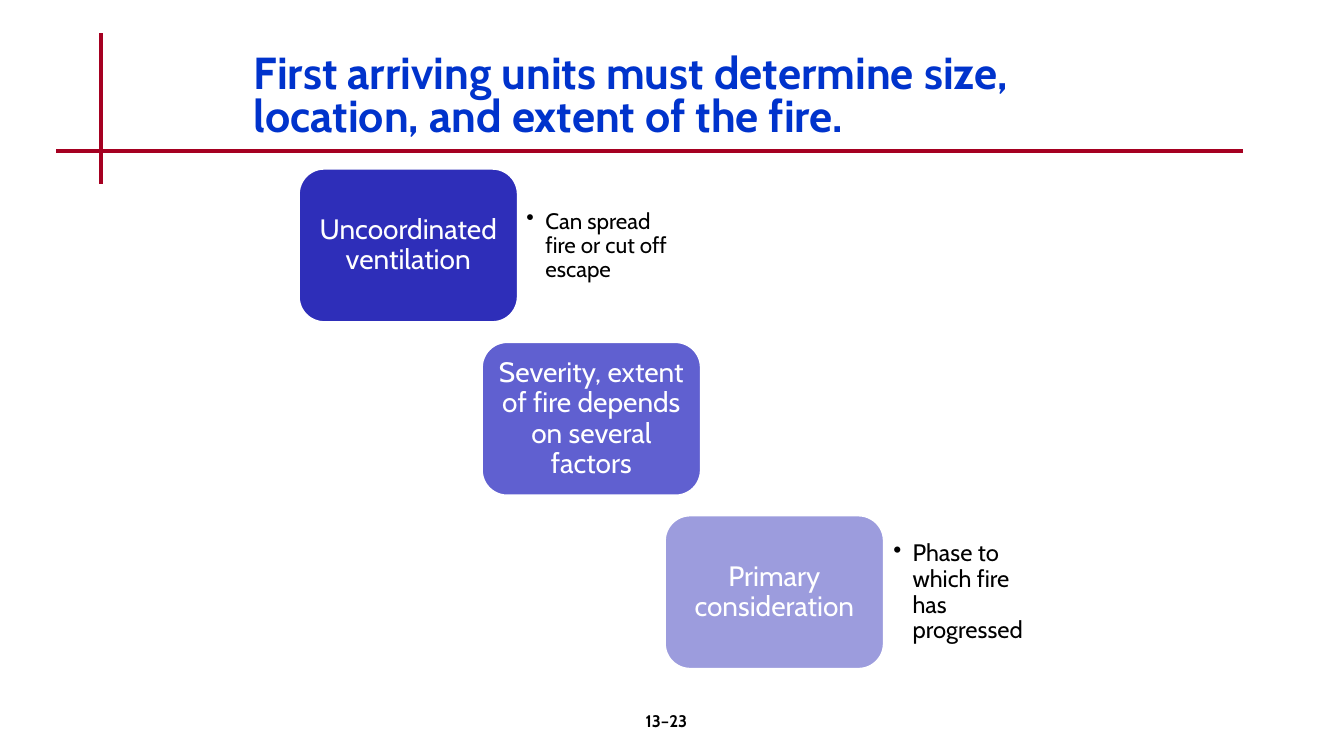
import pptx
import pptx.util
import pptx.dml.color
import pptx.enum.shapes
import pptx.enum.text
from lxml import etree

Inches = pptx.util.Inches
Pt = pptx.util.Pt
Align = pptx.enum.text.PP_ALIGN
Anchor = pptx.enum.text.MSO_ANCHOR

COLORS = {
    "title": "0033CC",
    "rule": "A50021",
    "text": "000000",
    "white": "FFFFFF",
    "steps": ["2E2EB9", "6060D0", "9C9CDD"],
}

# Step label, bullet beside it, bullet size, bullet inset
STEPS = [
    ("Uncoordinated ventilation", "Can spread fire or cut off escape", 16, 0.08),
    ("Severity, extent of fire depends on several factors", None, None, None),
    ("Primary consideration", "Phase to which fire has progressed", 17, 0.09),
]
STEP_LEFT, STEP_TOP = 2.96, 1.67
STEP_WIDTH, STEP_HEIGHT = 2.18, 1.53
STEP_RIGHT, STEP_DOWN = 1.815, 1.72


def rgb(color):
    return pptx.dml.color.RGBColor.from_string(color)


def set_values(target, values):
    for name, value in values.items():
        setattr(target, name, value)


def write_text(shape, text, size, color, bold=False, inset=None,
               anchor=Anchor.TOP, paragraph_format=None, bullet=False):
    frame = shape.text_frame
    set_values(frame, {"word_wrap": True, "vertical_anchor": anchor})
    if inset is not None:
        sides = ("left", "top", "right", "bottom")
        set_values(frame, {f"margin_{side}": Inches(inset) for side in sides})
    paragraph = frame.paragraphs[0]
    paragraph.text = text
    set_values(paragraph, paragraph_format or {})
    if bullet:
        add_bullet(paragraph)
    set_values(paragraph.font, {"name": "Cabin", "size": Pt(size), "bold": bold})
    paragraph.font.color.rgb = rgb(color)


def add_bullet(paragraph):
    properties = paragraph._p.get_or_add_pPr()
    properties.set("marL", str(Inches(0.19)))
    properties.set("indent", str(-Inches(0.19)))
    mark = etree.SubElement(properties, pptx.oxml.ns.qn("a:buChar"))
    mark.set("char", "•")


def add_text(slide, box, text, size, color, **options):
    shape = slide.shapes.add_textbox(*map(Inches, box))
    write_text(shape, text, size, color, **options)


def add_rule(slide, start, end):
    line = slide.shapes.add_connector(
        pptx.enum.shapes.MSO_CONNECTOR.STRAIGHT, *map(Inches, start + end))
    line.line.color.rgb = rgb(COLORS["rule"])
    line.line.width = Pt(3)
    etree.SubElement(line._element.spPr, pptx.oxml.ns.qn("a:effectLst"))


def add_step(slide, left, top, label, color):
    shape = slide.shapes.add_shape(
        pptx.enum.shapes.MSO_SHAPE.ROUNDED_RECTANGLE,
        *map(Inches, (left, top, STEP_WIDTH, STEP_HEIGHT)))
    shape.shadow.inherit = False
    shape.adjustments[0] = 0.167
    shape.fill.solid()
    shape.fill.fore_color.rgb = rgb(color)
    shape.line.color.rgb = rgb(COLORS["white"])
    shape.line.width = Pt(2)
    write_text(shape, label, 20, COLORS["white"], inset=0.08, anchor=Anchor.MIDDLE,
               paragraph_format={"alignment": Align.CENTER, "line_spacing": 0.9})


def main():
    presentation = pptx.Presentation()
    set_values(presentation, {"slide_width": Inches(13.33),
                              "slide_height": Inches(7.5)})
    slide = presentation.slides.add_slide(presentation.slide_layouts[6])

    # Crossed rules and title
    add_rule(slide, (1, 0.33), (1, 1.83))
    add_rule(slide, (0.56, 1.5), (12.33, 1.5))
    add_text(slide, (2.42, 0.5, 8.97, 1),
             "First arriving units must determine size, location, and extent of the fire.",
             32, COLORS["title"], bold=True, paragraph_format={"line_spacing": 0.8})

    # Descending steps, with bullets to their right
    for index, (label, note, note_size, note_inset) in enumerate(STEPS):
        left = STEP_LEFT + index * STEP_RIGHT
        top = STEP_TOP + index * STEP_DOWN
        add_step(slide, left, top, label, COLORS["steps"][index])
        if note:
            add_text(slide, (left + STEP_WIDTH, top + 0.15, 1.59, 1.24), note,
                     note_size, COLORS["text"], inset=note_inset,
                     anchor=Anchor.MIDDLE, bullet=True,
                     paragraph_format={"line_spacing": 0.9})

    # Page number
    add_text(slide, (5.22, 7, 2.78, 0.5), "13–23", 12, COLORS["text"], bold=True,
             paragraph_format={"alignment": Align.CENTER})

    presentation.save("out.pptx")


if __name__ == "__main__":
    main()
